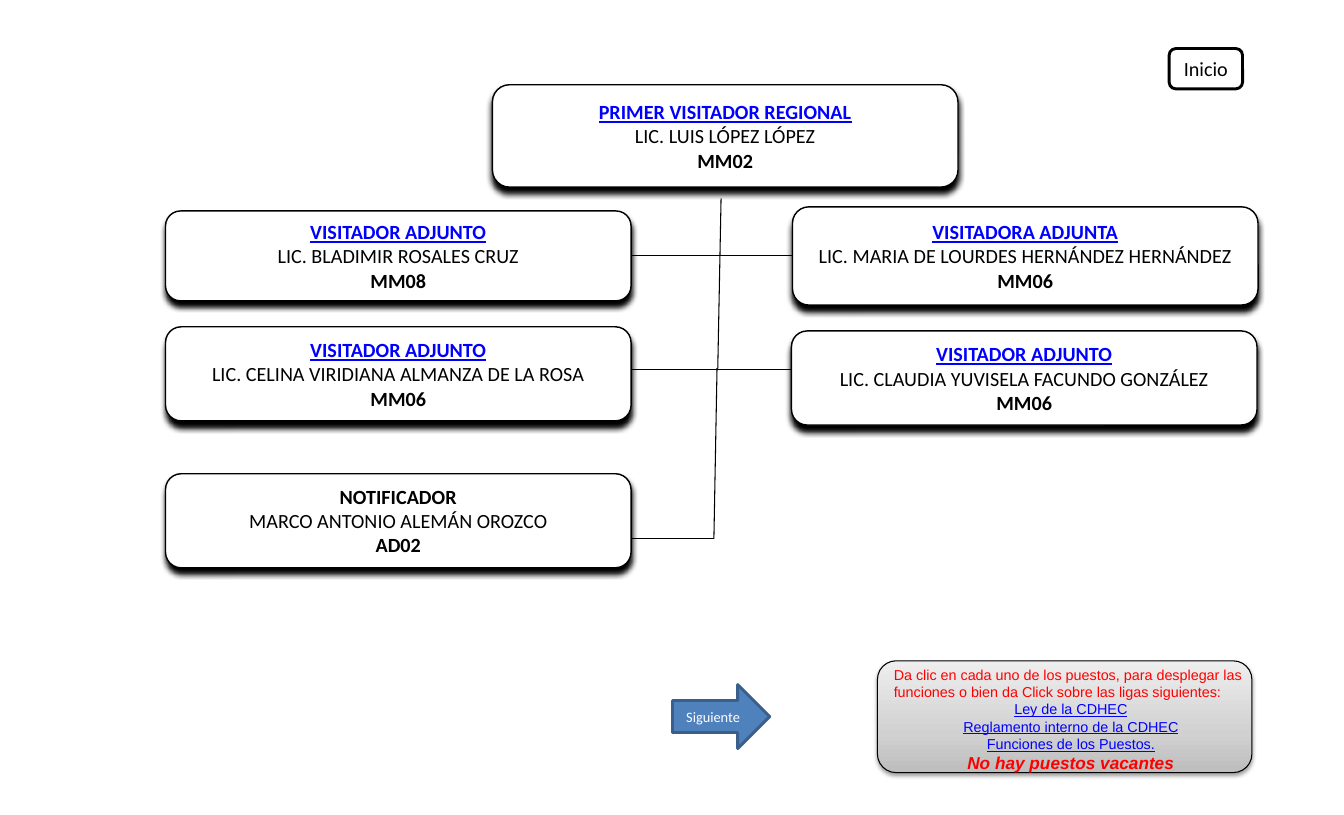
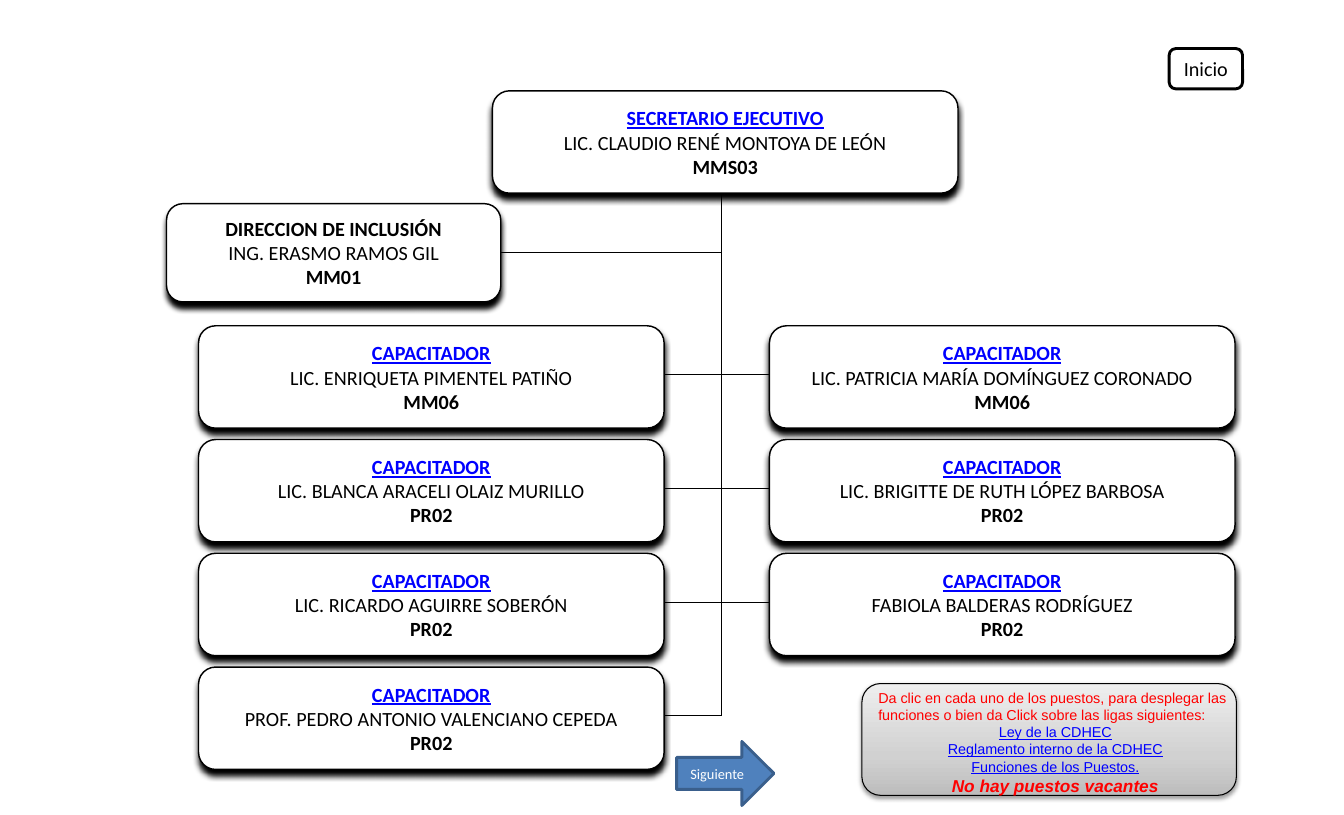
"""Build the two organisation chart slides of the regional office and the executive secretariat."""
import copy
from dataclasses import dataclass

import lxml.etree
import pptx
import pptx.dml.color
import pptx.enum.shapes
import pptx.enum.text
import pptx.oxml.ns
import pptx.util

Pt = pptx.util.Pt
SHAPES = pptx.enum.shapes.MSO_SHAPE
CENTER = pptx.enum.text.PP_ALIGN.CENTER
MIDDLE = pptx.enum.text.MSO_ANCHOR.MIDDLE
qn = pptx.oxml.ns.qn


@dataclass(frozen=True)
class Theme:
    ink: str = "000000"
    paper: str = "FFFFFF"
    link: str = "0000FF"
    alert: str = "FF0000"
    arrow: str = "4F81BD"
    arrow_edge: str = "3A5F8C"
    panel: tuple = ((0, "BDBDBD"), (0.35, "D1D1D1"), (1, "EEEEEE"))
    post_font: str = "Calibri"
    help_font: str = "Arial"
    post_size: float = 14
    small_size: float = 10
    vacancy_size: float = 12


THEME = Theme()
SLIDE_SIZE = (935.3, 567.4)
POST_WIDTH = 324
HEAD_LEFT, HEAD_HEIGHT = 342.7, 71.3

HELP_TEXT = (
    "Da clic en cada uno de los puestos, para desplegar las funciones "
    "o bien da Click sobre las ligas siguientes:"
)
HELP_LINKS = ["Ley de la CDHEC", "Reglamento interno de la CDHEC", "Funciones de los Puestos."]
VACANCY_NOTE = "No hay puestos vacantes"

TRAINERS_LEFT = [
    ("CAPACITADOR", "LIC. ENRIQUETA PIMENTEL PATIÑO", "MM06"),
    ("CAPACITADOR", "LIC. BLANCA ARACELI OLAIZ MURILLO", "PR02"),
    ("CAPACITADOR", "LIC. RICARDO AGUIRRE SOBERÓN", "PR02"),
    ("CAPACITADOR", "PROF. PEDRO ANTONIO VALENCIANO CEPEDA", "PR02"),
]
TRAINERS_RIGHT = [
    ("CAPACITADOR", "LIC. PATRICIA MARÍA DOMÍNGUEZ CORONADO", "MM06"),
    ("CAPACITADOR", "LIC. BRIGITTE DE RUTH LÓPEZ BARBOSA", "PR02"),
    ("CAPACITADOR", "FABIOLA BALDERAS RODRÍGUEZ", "PR02"),
]
TRAINER_COLUMNS = [(138.2, TRAINERS_LEFT), (535.5, TRAINERS_RIGHT)]
TRAINER_TOP, TRAINER_STEP, BRANCH_DROP = 226.8, 79.2, 34
SECRETARY_TRUNK = 501.8
UNLINKED_ROLES = {"NOTIFICADOR", "DIRECCION DE INCLUSIÓN"}


def trainer_posts():
    """Place the trainers in two columns with equal row steps."""
    return [
        ((left, TRAINER_TOP + row * TRAINER_STEP, POST_WIDTH, HEAD_HEIGHT), post)
        for left, trainers in TRAINER_COLUMNS
        for row, post in enumerate(trainers)
    ]


def trainer_branches():
    """Run a branch from the left column to the right one, or to the trunk."""
    for row in range(len(TRAINERS_LEFT)):
        y = TRAINER_TOP + row * TRAINER_STEP + BRANCH_DROP
        end = TRAINER_COLUMNS[1][0] if row < len(TRAINERS_RIGHT) else SECRETARY_TRUNK
        yield TRAINER_COLUMNS[0][0] + POST_WIDTH, y, end, y


CHARTS = [
    {
        "posts": [
            ((HEAD_LEFT, 59, POST_WIDTH, HEAD_HEIGHT),
             ("PRIMER VISITADOR REGIONAL", "LIC. LUIS LÓPEZ LÓPEZ", "MM02")),
            ((115.2, 146.9, POST_WIDTH, 62.6),
             ("VISITADOR ADJUNTO", "LIC. BLADIMIR ROSALES CRUZ", "MM08")),
            ((551.5, 144, POST_WIDTH, 68.4),
             ("VISITADORA ADJUNTA", "LIC. MARIA DE LOURDES HERNÁNDEZ HERNÁNDEZ", "MM06")),
            ((115.2, 227.5, POST_WIDTH, 65.5),
             ("VISITADOR ADJUNTO", "LIC. CELINA VIRIDIANA ALMANZA DE LA ROSA", "MM06")),
            ((550.8, 230.4, POST_WIDTH, 65.5),
             ("VISITADOR ADJUNTO", "LIC. CLAUDIA YUVISELA FACUNDO GONZÁLEZ", "MM06")),
            ((115.2, 329.8, POST_WIDTH, 65.5),
             ("NOTIFICADOR", "MARCO ANTONIO ALEMÁN OROZCO", "AD02")),
        ],
        "branches": [
            (501.8, 138.2, 499.5, 256.7),
            (499, 256.3, 496.8, 375.1),
            (439.2, 177.8, 551.5, 177.8),
            (439.2, 257, 550.8, 257),
            (496.8, 375.1, 439.2, 375.1),
        ],
        "help": (610.6, 460.1),
        "next": (468, 476.6),
    },
    {
        "posts": [
            ((HEAD_LEFT, 63.2, POST_WIDTH, HEAD_HEIGHT),
             ("SECRETARIO EJECUTIVO", "LIC. CLAUDIO RENÉ MONTOYA DE LEÓN", "MMS03")),
            ((115.9, 141.8, 232.6, 68.4),
             ("DIRECCION DE INCLUSIÓN", "ING. ERASMO RAMOS GIL", "MM01")),
            *trainer_posts(),
        ],
        "branches": [
            (SECRETARY_TRUNK, 134.5, SECRETARY_TRUNK, 498.4),
            (348.5, 175.7, SECRETARY_TRUNK, 175.7),
            *trainer_branches(),
        ],
        "help": (599.8, 475.9),
        "next": (470.9, 516.2),
    },
]


def rgb(code):
    """Turn a hex code into a colour."""
    return pptx.dml.color.RGBColor.from_string(code)


def add_block(slide, kind, frame, fill, edge, weight):
    """Add a plain outlined shape without shadow."""
    block = slide.shapes.add_shape(kind, *map(Pt, frame))
    block.shadow.inherit = False
    if fill:
        block.fill.solid()
        block.fill.fore_color.rgb = rgb(fill)
    block.line.color.rgb = rgb(edge)
    block.line.width = Pt(weight)
    return block


def add_shadow(block, opacity, blur, distance):
    """Cast a black shadow straight down."""
    effects = block._element.spPr.find(qn("a:effectLst"))
    shadow = lxml.etree.SubElement(
        effects, qn("a:outerShdw"), blurRad=str(Pt(blur)), dist=str(Pt(distance)),
        dir="5400000", rotWithShape="0")
    color = lxml.etree.SubElement(shadow, qn("a:srgbClr"), val=THEME.ink)
    lxml.etree.SubElement(color, qn("a:alpha"), val=str(opacity * 1000))


def write_lines(frame, lines, font_name):
    """Write one paragraph per line of (text, size, colour, font flags, alignment)."""
    for index, (text, size, color, flags, alignment) in enumerate(lines):
        paragraph = frame.add_paragraph() if index else frame.paragraphs[0]
        paragraph.text = text
        paragraph.alignment = alignment
        font = paragraph.font
        font.name, font.size, font.color.rgb = font_name, Pt(size), rgb(color)
        for flag in flags:
            setattr(font, flag, True)


def add_post(slide, frame, post):
    """Add a post box with role, holder and pay code."""
    role, holder, code = post
    box = add_block(slide, SHAPES.ROUNDED_RECTANGLE, frame, THEME.paper, THEME.ink, 1)
    add_shadow(box, 100, 4, 4)
    text = box.text_frame
    text.word_wrap = False
    text.vertical_anchor = MIDDLE
    text.margin_left = text.margin_right = Pt(12.2)
    text.margin_top = text.margin_bottom = Pt(6.5)
    linked = role not in UNLINKED_ROLES
    size = THEME.post_size
    write_lines(text, [
        (role, size, THEME.link if linked else THEME.ink,
         ("bold", "underline") if linked else ("bold",), CENTER),
        (holder, size, THEME.ink, (), CENTER),
        (code, size, THEME.ink, ("bold",), CENTER),
    ], THEME.post_font)


def add_branch(slide, x1, y1, x2, y2):
    """Add a thin chart line."""
    branch = slide.shapes.add_connector(
        pptx.enum.shapes.MSO_CONNECTOR.STRAIGHT, *map(Pt, (x1, y1, x2, y2)))
    branch.line.color.rgb = rgb(THEME.ink)
    branch.line.width = Pt(0.75)
    lxml.etree.SubElement(branch._element.spPr, qn("a:effectLst"))


def add_button(slide, kind, frame, label, size, ink, fill, edge):
    """Add a navigation button."""
    button = add_block(slide, kind, frame, fill, edge, 2)
    button.text_frame.word_wrap = False
    button.text_frame.vertical_anchor = MIDDLE
    write_lines(button.text_frame, [(label, size, ink, (), CENTER)], THEME.post_font)


def add_help(slide, left, top):
    """Add the shaded help panel and its text."""
    panel = add_block(
        slide, SHAPES.ROUNDED_RECTANGLE, (left, top, 260.6, 77.8), None, THEME.ink, 0.75)
    panel.fill.gradient()
    panel.fill.gradient_angle = 90
    stops = panel._element.spPr.find(".//" + qn("a:gsLst"))
    stops.insert(1, copy.deepcopy(stops[0]))
    for stop, (position, color) in zip(panel.fill.gradient_stops, THEME.panel):
        stop.position = position
        stop.color.rgb = rgb(color)
    add_shadow(panel, 38, 3.1, 1.6)

    text = slide.shapes.add_textbox(*map(Pt, (left + 4.3, top, 260.6, 82))).text_frame
    text.word_wrap = True
    small = THEME.small_size
    write_lines(text, [
        (HELP_TEXT, small, THEME.alert, (), None),
        *[(link, small, THEME.link, ("underline",), CENTER) for link in HELP_LINKS],
        (VACANCY_NOTE, THEME.vacancy_size, THEME.alert, ("bold", "italic"), CENTER),
    ], THEME.help_font)


def add_chart_slide(deck, chart):
    """Add one organisation chart slide."""
    slide = deck.slides.add_slide(deck.slide_layouts[6])
    for branch in chart["branches"]:
        add_branch(slide, *branch)
    for frame, post in chart["posts"]:
        add_post(slide, frame, post)
    add_button(slide, SHAPES.ROUNDED_RECTANGLE, (813.6, 33.8, 51.1, 28.1), "Inicio",
               THEME.post_size, THEME.ink, THEME.paper, THEME.ink)
    add_help(slide, *chart["help"])
    add_button(slide, SHAPES.RIGHT_ARROW, (*chart["next"], 67.7, 44.6), "Siguiente",
               THEME.small_size, THEME.paper, THEME.arrow, THEME.arrow_edge)


def main():
    """Build and save the deck."""
    deck = pptx.Presentation()
    deck.slide_width, deck.slide_height = map(Pt, SLIDE_SIZE)
    for chart in CHARTS:
        add_chart_slide(deck, chart)
    deck.save("out.pptx")


if __name__ == "__main__":
    main()
